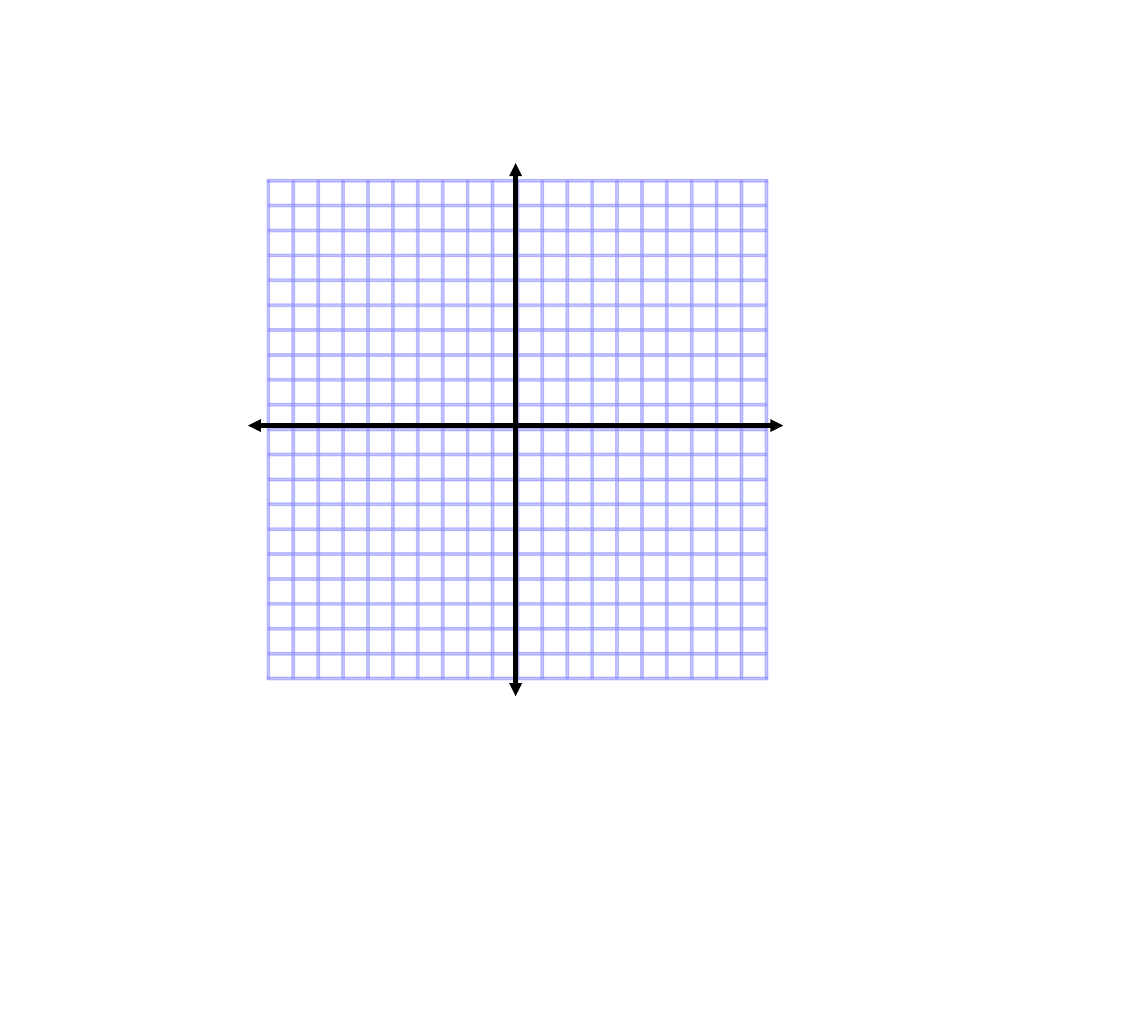
from dataclasses import dataclass

from lxml import etree
from pptx import Presentation
from pptx import util as u
from pptx.dml.color import RGBColor
from pptx.enum import shapes
from pptx.oxml import ns
from pptx.shapes.group import GroupShape

PX = 914.4
BLUE = RGBColor(0x8C, 0x8C, 0xFF)
BLACK = RGBColor(0, 0, 0)
ALPHA = "51000"
CELLS = 20
STEP = 241
THICK = 26
LEFT, TOP = 2585, 1737
SIDE = CELLS * STEP


@dataclass
class Bar:
    left: int
    top: int
    width: int
    height: int


@dataclass
class Axis:
    x1: int
    y1: int
    x2: int
    y2: int


def emu(px: int) -> u.Emu:
    return u.Emu(round(px * PX))


def add_bar(group: GroupShape, bar: Bar) -> None:
    shape = group.shapes.add_shape(
        shapes.MSO_SHAPE.RECTANGLE,
        emu(bar.left), emu(bar.top), emu(bar.width), emu(bar.height))
    shape.shadow.inherit = False
    shape.fill.solid()
    shape.fill.fore_color.rgb = BLUE
    shape.line.color.rgb = BLUE
    shape.line.width = u.Pt(0)
    for tint in shape._element.spPr.iter(ns.qn("a:srgbClr")):
        etree.SubElement(tint, ns.qn("a:alpha"), val=ALPHA)


def add_axis(group: GroupShape, axis: Axis) -> None:
    line = group.shapes.add_connector(
        shapes.MSO_CONNECTOR.STRAIGHT,
        emu(axis.x1), emu(axis.y1), emu(axis.x2), emu(axis.y2))
    line.line.color.rgb = BLACK
    line.line.width = u.Pt(3)
    stroke = line.line._get_or_add_ln()
    for end in ("a:headEnd", "a:tailEnd"):
        etree.SubElement(stroke, ns.qn(end), type="triangle")
    etree.SubElement(line._element.spPr, ns.qn("a:effectLst"))


def main() -> None:
    deck = Presentation()
    deck.slide_width, deck.slide_height = emu(11110), emu(10030)
    slide = deck.slides.add_slide(deck.slide_layouts[6])
    group = slide.shapes.add_group_shape()

    for i in range(CELLS + 1):
        inset = 0 if i in (0, CELLS) else THICK // 2
        add_bar(group, Bar(LEFT + i * STEP, TOP + THICK // 2, THICK, SIDE))
        add_bar(group, Bar(LEFT + inset, TOP + i * STEP,
                           SIDE + THICK - 2 * inset, THICK))

    for axis in (Axis(4990, 6740, 4990, 1580), Axis(2400, 4120, 7580, 4120)):
        add_axis(group, axis)

    deck.save("out.pptx")


if __name__ == "__main__":
    main()
